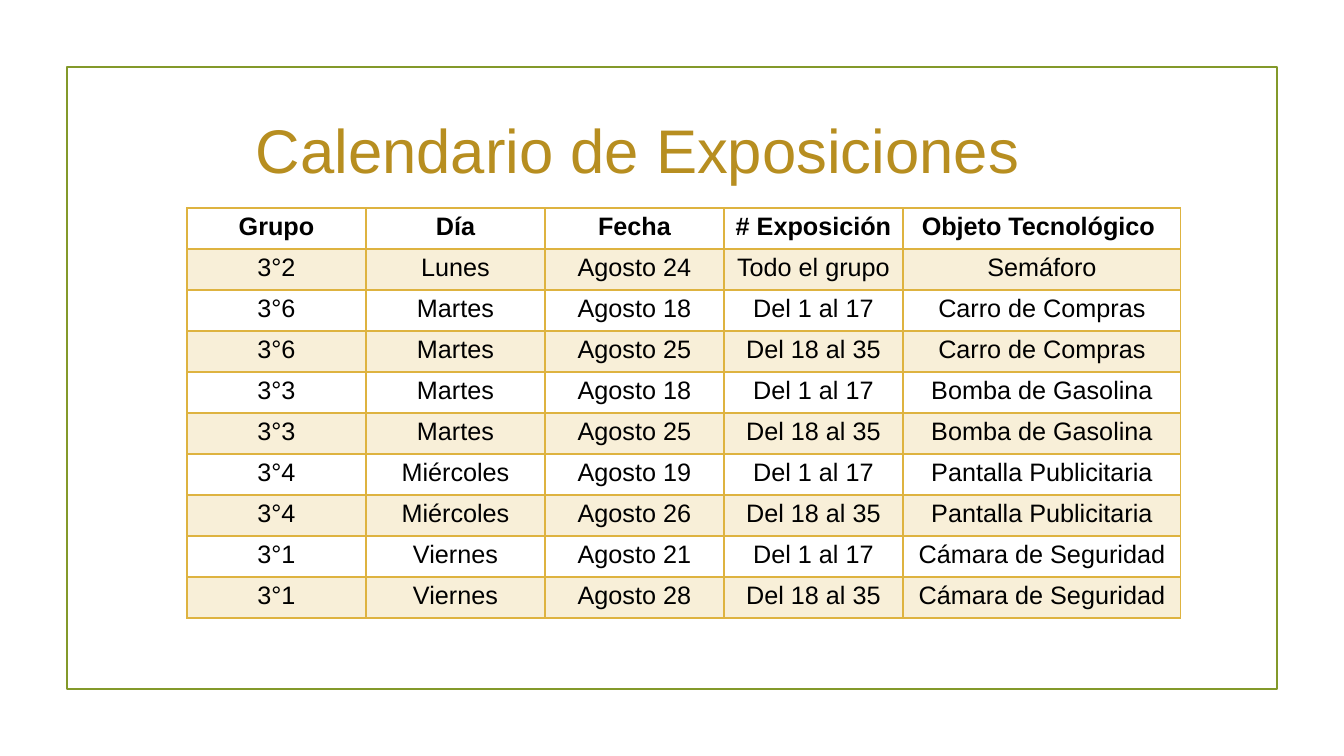
from lxml import etree
from pptx import Presentation
from pptx import util as u
from pptx.dml.color import RGBColor
from pptx.enum import shapes, text
from pptx.oxml.ns import qn

# Slide scale and palette
WIDE, HIGH = 1344, 756
SCALE = 12192000 / WIDE
FONT = "Arial"
BLACK = RGBColor(0x00, 0x00, 0x00)
GREEN = RGBColor(0x83, 0x99, 0x2A)
OCHRE = RGBColor(0xB7, 0x8E, 0x20)
GOLD = RGBColor(0xDE, 0xB3, 0x40)

# Timetable
COLS = [179] * 4 + [278]
ROW = 41
HEAD = ["Grupo", "Día", "Fecha", "# Exposición", "Objeto Tecnológico "]
FIRST, LAST = "Del 1 al 17", "Del 18 al 35"
DATES = [
    ["3°2", "Lunes", "Agosto 24", "Todo el grupo", "Semáforo"],
    ["3°6", "Martes", "Agosto 18", FIRST, "Carro de Compras"],
    ["3°6", "Martes", "Agosto 25", LAST, "Carro de Compras"],
    ["3°3", "Martes", "Agosto 18", FIRST, "Bomba de Gasolina"],
    ["3°3", "Martes", "Agosto 25", LAST, "Bomba de Gasolina"],
    ["3°4", "Miércoles", "Agosto 19", FIRST, "Pantalla Publicitaria"],
    ["3°4", "Miércoles", "Agosto 26", LAST, "Pantalla Publicitaria"],
    ["3°1", "Viernes", "Agosto 21", FIRST, "Cámara de Seguridad"],
    ["3°1", "Viernes", "Agosto 28", LAST, "Cámara de Seguridad"],
]


def px(size):
    return u.Emu(round(size * SCALE))


def write(frame, words, size, color, bold=False):
    para = frame.paragraphs[0]
    para.alignment = text.PP_ALIGN.CENTER
    run = para.add_run()
    run.text = words
    font = run.font
    font.name, font.size, font.bold = FONT, u.Pt(size), bold
    font.color.rgb = color


def add_frame(slide, x, y, w, h):
    box = slide.shapes.add_shape(
        shapes.MSO_SHAPE.RECTANGLE, px(x), px(y), px(w), px(h))
    box.shadow.inherit = False
    box.fill.background()
    box.line.color.rgb = GREEN
    box.line.width = u.Pt(1.25)


def add_title(slide, words, x, y, w, h):
    frame = slide.shapes.add_textbox(px(x), px(y), px(w), px(h)).text_frame
    frame.word_wrap = True
    frame.vertical_anchor = text.MSO_ANCHOR.MIDDLE
    write(frame, words, 44, OCHRE)


def add_edges(cell, base):
    # Borders must come before the fill in the cell properties
    props = cell._tc.get_or_add_tcPr()
    for spot, (side, width) in enumerate(
            [("lnL", 1), ("lnR", 1), ("lnT", 1), ("lnB", base)]):
        line = etree.Element(qn("a:" + side), w=str(u.Pt(width)))
        fill = etree.SubElement(line, qn("a:solidFill"))
        etree.SubElement(fill, qn("a:srgbClr"), val=str(GOLD))
        props.insert(spot, line)


def shade(cell, band):
    if not band:
        cell.fill.background()
        return
    cell.fill.solid()
    cell.fill.fore_color.rgb = GOLD
    color = cell._tc.tcPr.find(qn("a:solidFill")).find(qn("a:srgbClr"))
    etree.SubElement(color, qn("a:alpha"), val="20000")


def add_grid(slide, rows, x, y):
    table = slide.shapes.add_table(
        len(rows), len(COLS), px(x), px(y),
        px(sum(COLS)), px(ROW * len(rows))).table
    for col, width in zip(table.columns, COLS):
        col.width = px(width)
    for r, row in enumerate(rows):
        table.rows[r].height = px(ROW)
        for c, words in enumerate(row):
            cell = table.cell(r, c)
            write(cell.text_frame, words, 18, BLACK, bold=r == 0)
            shade(cell, r % 2 == 1)
            add_edges(cell, 2 if r == 0 else 1)


def main():
    deck = Presentation()
    deck.slide_width, deck.slide_height = px(WIDE), px(HIGH)
    slide = deck.slides.add_slide(deck.slide_layouts[6])
    # Border and heading
    add_frame(slide, 67, 67, 1210, 622)
    add_title(slide, "Calendario de Exposiciones", 214, 101, 848, 95)
    # Presentation dates
    add_grid(slide, [HEAD] + DATES, 187, 208)
    deck.save("out.pptx")


if __name__ == "__main__":
    main()
